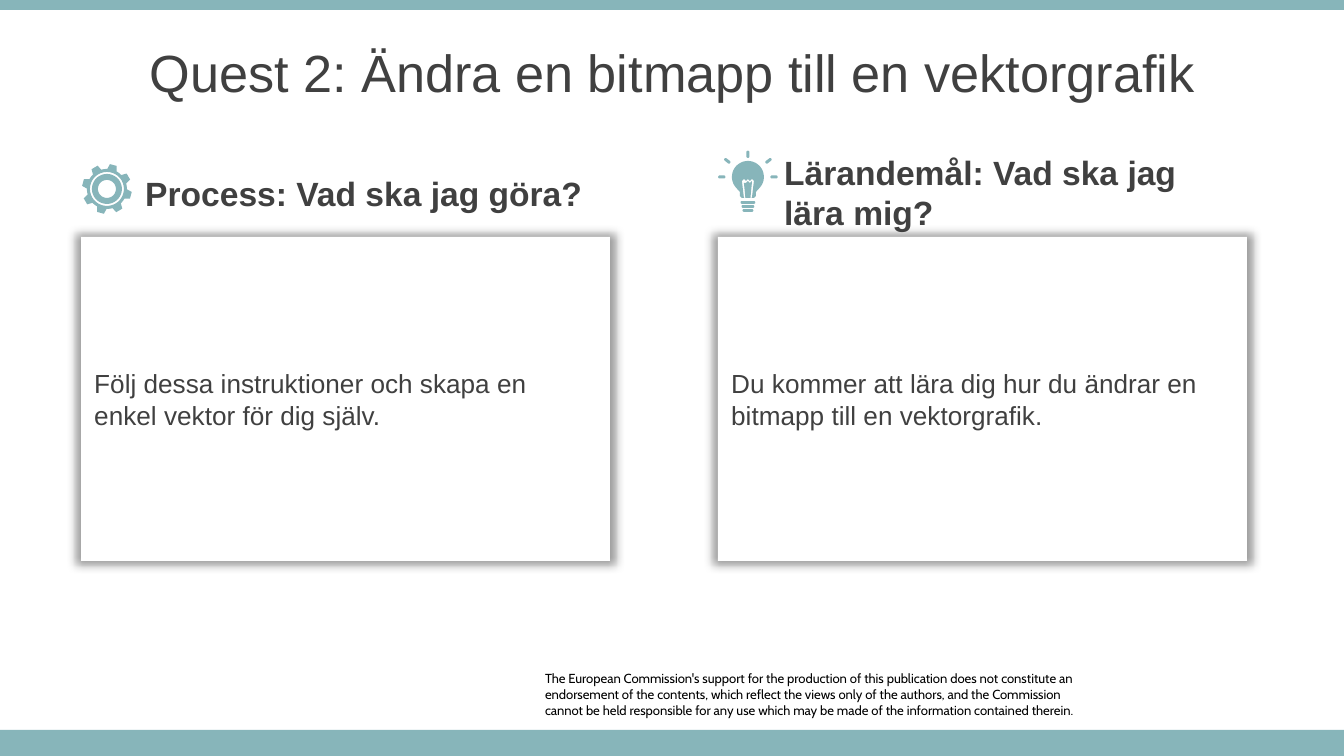
"""Build the quest slide with its two headed panels."""
from math import atan2, cos, hypot, pi, radians, sin

from lxml.etree import SubElement
from pptx import Presentation
from pptx.dml.color import RGBColor
from pptx.enum.shapes import MSO_SHAPE as Kind
from pptx.enum.text import MSO_ANCHOR as Anchor, PP_ALIGN as Align
from pptx.oxml.ns import qn
from pptx.util import Pt

TITLE = "Quest 2: Ändra en bitmapp till en vektorgrafik"
CARDS = [
    ("Process: Vad ska jag göra?", (132, 172),
     "Följ dessa instruktioner och skapa en enkel vektor för dig själv.", 81),
    ("Lärandemål: Vad ska jag lära mig?", (771, 171),
     "Du kommer att lära dig hur du ändrar en bitmapp till en vektorgrafik.", 718),
]
NOTE = [
    "The European Commission's support for the production of this publication "
    "does not constitute an endorsement of the contents, which reflect the views "
    "only of the authors, and the Commission",
    "cannot be held responsible for any use which may be made of the information "
    "contained therein.",
]
BARS = [(0, 730, 1344, 26), (0, 0, 1344, 10)]
TEAL, GREY, WHITE, BLACK = "87B5BA", "404040", "FFFFFF", "000000"
SCALE = 914400 / 134.4


def px(num):
    return round(num * SCALE)


def tint(code):
    return RGBColor.from_string(code)


def paint(shape, code):
    shape.shadow.inherit = False
    shape.fill.solid()
    shape.fill.fore_color.rgb = tint(code)
    shape.line.fill.background()
    return shape


def rect(area, code):
    return paint(slide.shapes.add_shape(Kind.RECTANGLE, *map(px, area)), code)


def write(lines, area=None, shape=None, size=14, font="Arial", color=GREY,
          bold=False, align=Align.LEFT, anchor=Anchor.MIDDLE, inset=None):
    shape = shape or slide.shapes.add_textbox(*map(px, area))
    frame = shape.text_frame
    frame.word_wrap = True
    frame.vertical_anchor = anchor
    if inset is not None:
        frame.margin_left = frame.margin_right = inset
        frame.margin_top = frame.margin_bottom = inset
    for i, line in enumerate(lines):
        para = frame.add_paragraph() if i else frame.paragraphs[0]
        para.alignment = align
        run = para.add_run()
        run.text = line
        run.font.size, run.font.name, run.font.bold = Pt(size), font, bold
        run.font.color.rgb = tint(color)


def glow(shape):
    effect = shape._element.spPr.find(qn("a:effectLst"))
    shade = SubElement(effect, qn("a:outerShdw"), blurRad=str(Pt(5)),
                       sx="102000", sy="102000", algn="ctr", rotWithShape="0")
    color = SubElement(shade, qn("a:srgbClr"), val=BLACK)
    SubElement(color, qn("a:alpha"), val="40000")


def arc(x, y, r, start=0, end=360, steps=36):
    turns = [radians(start + (end - start) * i / steps) for i in range(steps + 1)]
    return [(x + r * cos(t), y + r * sin(t)) for t in turns]


def pill(x1, y1, x2, y2, r=1.5):
    tilt = atan2(y2 - y1, x2 - x1) * 180 / pi
    return (arc(x2, y2, r, tilt - 90, tilt + 90, 8)
            + arc(x1, y1, r, tilt + 90, tilt + 270, 8))


def draw(loops, code):
    loops = [[(px(x), px(y)) for x, y in loop] for loop in loops]
    form = slide.shapes.build_freeform(*loops[0][0], scale=1.0)
    for i, loop in enumerate(loops):
        if i:
            form.move_to(*loop[0])
        form.add_line_segments(loop[1:], close=True)
    paint(form.convert_to_shape(), code)


def gear(x, y):
    rim = []
    for i in range(8):
        mid = 45 * i - 75
        rim += arc(x, y, 20, mid - 31, mid - 14, 4)
        rim += arc(x, y, 25, mid - 8, mid + 8, 1)
    draw([rim] + [arc(x, y, r) for r in (17, 15, 9)], TEAL)


def bulb(x, y):
    neck = [(-8, 15), (-8, 19), (-6, 21), (6, 21), (8, 19), (8, 15)]
    head = arc(x, y, 16, 137, 403) + [(x - dx, y + dy) for dx, dy in neck]
    wave = [(x - 6 + 2 * i, y + 4 - 2 * (i % 2)) for i in range(7)]
    legs = [(x + 4, y + 21), (x + 2.5, y + 21), (x + 4, y + 6)]
    under = [(a, b + 2) for a, b in wave[5:1:-1]]
    wire = wave + legs + under + [(2 * x - a, b) for a, b in legs[::-1]]
    rays = []
    for turn, near in ((180, 24), (218, 24), (270, 20.5), (322, 24), (0, 24)):
        c, s = cos(radians(turn)), sin(radians(turn))
        far = near + hypot(3, 3)
        rays.append(pill(x + near * c, y + near * s, x + far * c, y + far * s))
    base = [pill(x - w, y + dy, x + w, y + dy, 1.4)
            for w, dy in ((6, 25.5), (5, 29.5), (4, 33.5))]
    draw([head, wire] + rays + base, TEAL)


deck = Presentation()
deck.slide_width, deck.slide_height = px(1344), px(756)
slide = deck.slides.add_slide(deck.slide_layouts[6])

write(NOTE, (545, 671, 560, 47), size=7, font="Cabin", color=BLACK,
      anchor=Anchor.TOP, inset=0)
for bar in BARS:
    rect(bar, TEAL)
write([TITLE], (0, 30, 1344, 84), size=28, align=Align.CENTER)
gear(107, 189)
bulb(748, 177)
for head, spot, body, left in CARDS:
    card = rect((left, 237, 529, 324), WHITE)
    glow(card)
    write([body], shape=card)
    write([head], (*spot, 478, 42), size=18, bold=True)

deck.save("out.pptx")
